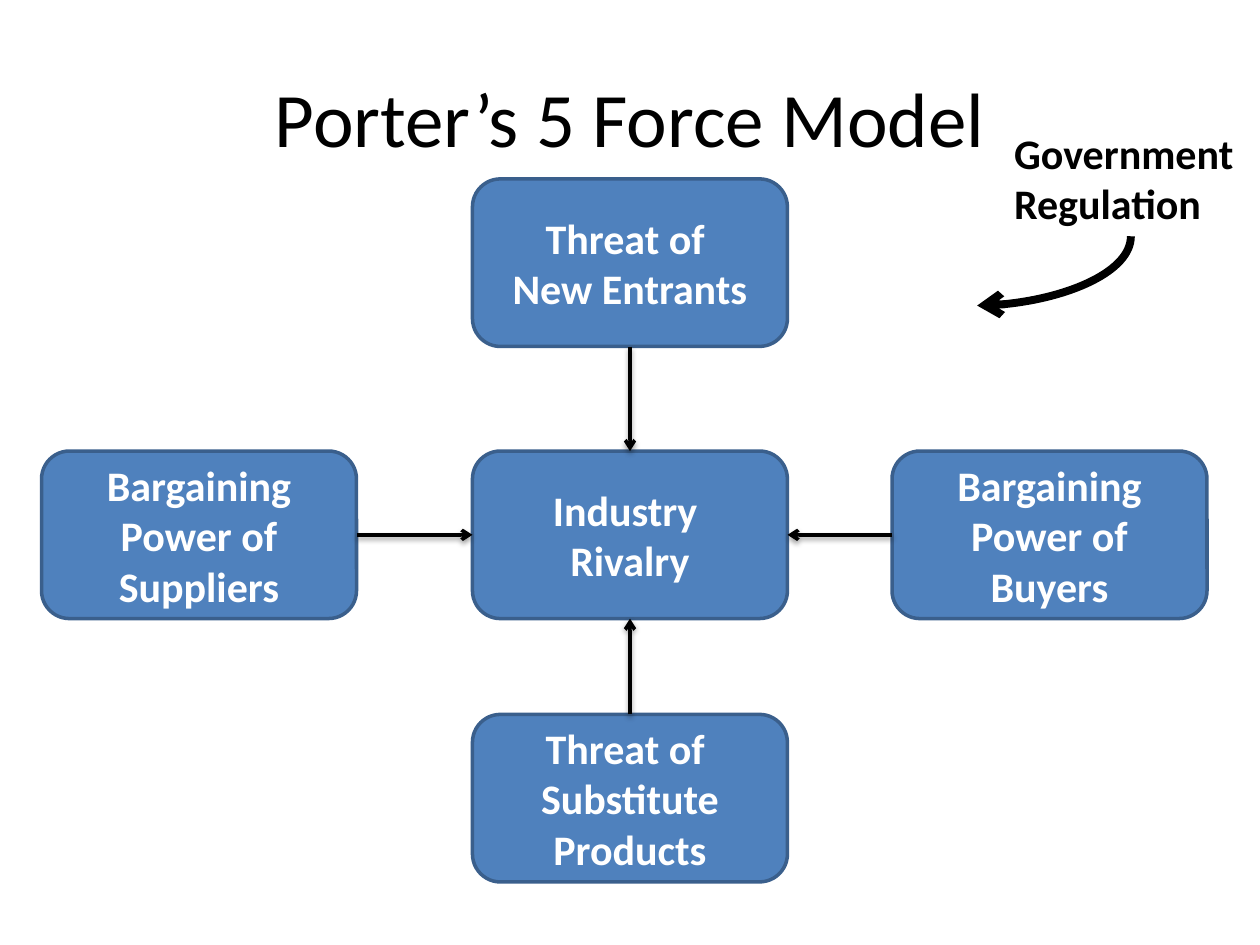
from lxml import etree
from pptx import Presentation
from pptx.dml.color import RGBColor
from pptx.enum.shapes import MSO_CONNECTOR, MSO_SHAPE
from pptx.enum.text import MSO_ANCHOR, MSO_AUTO_SIZE, PP_ALIGN
from pptx.oxml.ns import qn
from pptx.util import Inches, Pt

ROUND = MSO_SHAPE.ROUNDED_RECTANGLE
LINE, CURVE = MSO_CONNECTOR.STRAIGHT, MSO_CONNECTOR.CURVE
LEFT, CENTER = PP_ALIGN.LEFT, PP_ALIGN.CENTER
MIDDLE = MSO_ANCHOR.MIDDLE
GROW = MSO_AUTO_SIZE.SHAPE_TO_FIT_TEXT

FONT = "Calibri"
BLACK, WHITE, BLUE, EDGE = "000000", "FFFFFF", "4F81BD", "3A5F8C"
BOX_W, BOX_H = 2.5, 1.33
MID_X, MID_Y = 3.75, 3.58

# Connection sites of a rounded rectangle
TOP_SITE, LEFT_SITE, BASE_SITE, RIGHT_SITE = range(4)

# Force: text, left, top, site it leaves from, site it enters on the centre box
FORCES = [
    ("Threat of \nNew Entrants", MID_X, 1.42, BASE_SITE, TOP_SITE),
    ("Threat of \nSubstitute Products", MID_X, 5.67, TOP_SITE, BASE_SITE),
    ("Bargaining Power of Suppliers", 0.33, MID_Y, RIGHT_SITE, LEFT_SITE),
    ("Bargaining Power of\nBuyers", 7.08, MID_Y, LEFT_SITE, RIGHT_SITE),
]


def rgb(code):
    return RGBColor.from_string(code)


def write(frame, text, size=24, color=BLACK, bold=True, align=LEFT):
    frame.text = text
    for para in frame.paragraphs:
        para.alignment = align
        font = para.font
        font.name, font.size, font.bold = FONT, Pt(size), bold
        font.color.rgb = rgb(color)


def add_title(slide, text):
    title = slide.shapes.title
    title.left, title.top = Inches(0.5), Inches(0.3)
    title.width, title.height = Inches(9), Inches(1.25)
    title.text_frame.vertical_anchor = MIDDLE
    write(title.text_frame, text, size=44, bold=False, align=CENTER)


def add_box(slide, text, left, top):
    box = slide.shapes.add_shape(
        ROUND, Inches(left), Inches(top), Inches(BOX_W), Inches(BOX_H))
    box.shadow.inherit = False
    box.fill.solid()
    box.fill.fore_color.rgb = rgb(BLUE)
    box.line.color.rgb = rgb(EDGE)
    box.line.width = Pt(2)
    box.text_frame.word_wrap = True
    box.text_frame.vertical_anchor = MIDDLE
    write(box.text_frame, text, color=WHITE, align=CENTER)
    return box


def style_arrow(link, width, shadow=False):
    link.line.color.rgb = rgb(BLACK)
    link.line.width = Pt(width)
    props = link._element.spPr
    etree.SubElement(props.find(qn("a:ln")), qn("a:tailEnd"), type="arrow")
    effects = etree.SubElement(props, qn("a:effectLst"))
    if shadow:
        shade = etree.SubElement(
            effects, qn("a:outerShdw"), blurRad=str(Pt(3.1)),
            dist=str(Pt(1.6)), dir="5400000", rotWithShape="0")
        tint = etree.SubElement(shade, qn("a:srgbClr"), val=BLACK)
        etree.SubElement(tint, qn("a:alpha"), val="38000")


def join(slide, start, exit_site, end, entry_site):
    link = slide.shapes.add_connector(LINE, 0, 0, 0, 0)
    link.begin_connect(start, exit_site)
    link.end_connect(end, entry_site)
    style_arrow(link, 2, shadow=True)


def add_curve(slide, left, top, width, height):
    """Quarter curve, turned to run from upper right to lower left."""
    link = slide.shapes.add_connector(
        CURVE, Inches(left), Inches(top),
        Inches(left + width), Inches(top + height))
    props = link._element.spPr
    props.find(qn("a:prstGeom")).set("prst", "curvedConnector2")
    props.find(qn("a:xfrm")).set("rot", "5400000")
    style_arrow(link, 4.5)


def add_label(slide, text, left, top, width, height):
    label = slide.shapes.add_textbox(
        Inches(left), Inches(top), Inches(width), Inches(height))
    label.text_frame.word_wrap = False
    label.text_frame.auto_size = GROW
    write(label.text_frame, text)


def main():
    deck = Presentation()
    deck.slide_width, deck.slide_height = Inches(10), Inches(7.5)
    slide = deck.slides.add_slide(deck.slide_layouts[5])
    add_title(slide, "Porter’s 5 Force Model")

    # Centre box and the four forces around it
    core = add_box(slide, "Industry \nRivalry", MID_X, MID_Y)
    boxes = [add_box(slide, text, left, top)
             for text, left, top, _, _ in FORCES]
    for box, (_, _, _, leave, enter) in zip(boxes, FORCES):
        join(slide, box, leave, core, enter)

    # Outside influence
    add_label(slide, "Government\nRegulation", 7.95, 0.96, 2.04, 0.91)
    add_curve(slide, 8.09, 1.54, 0.55, 1.22)

    deck.save("out.pptx")


if __name__ == "__main__":
    main()
